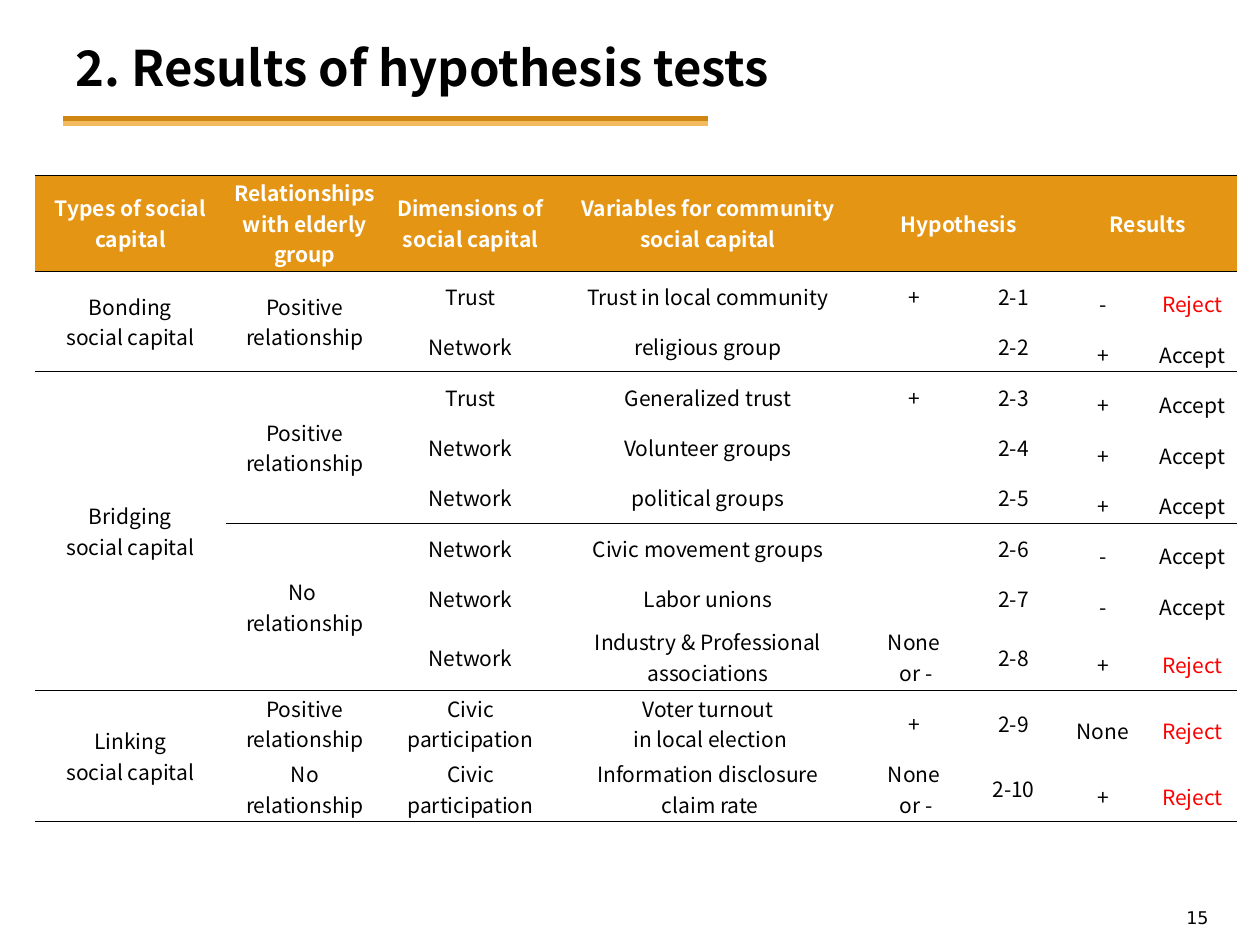
from lxml import etree
from pptx import Presentation
from pptx.dml.color import RGBColor
from pptx.enum.shapes import MSO_CONNECTOR
from pptx.enum.text import MSO_ANCHOR, PP_ALIGN
from pptx.oxml.ns import qn
from pptx.util import Inches, Pt

STRAIGHT = MSO_CONNECTOR.STRAIGHT
TOP, MIDDLE = MSO_ANCHOR.TOP, MSO_ANCHOR.MIDDLE
LEFT, CENTER, RIGHT = PP_ALIGN.LEFT, PP_ALIGN.CENTER, PP_ALIGN.RIGHT

BLACK = RGBColor(0x00, 0x00, 0x00)
WHITE = RGBColor(0xFF, 0xFF, 0xFF)
RED = RGBColor(0xFF, 0x00, 0x00)
ORANGE = RGBColor(0xE4, 0x95, 0x14)
DARK_GOLD = RGBColor(0xCF, 0x87, 0x11)
LIGHT_GOLD = RGBColor(0xF2, 0xBB, 0x60)

FONT = "Noto Sans CJK KR"
NUMBER_FONT = "DejaVu Sans"
NO_STYLE = "{2D5ABB26-0587-4C30-8999-92F81FD0307C}"

COL_WIDTHS = [1.51, 1.26, 1.37, 2.4, 0.87, 0.71, 0.71, 0.71]
ROW_HEIGHTS = [0.76] + [0.4] * 7 + [0.53] + [0.52] * 2
RESULT_COL = 6
RULED_ROWS = {0, 2, 5, 8, 10}
MERGES = [
    (0, 4, 0, 5), (0, 6, 0, 7), (1, 0, 2, 0), (1, 1, 2, 1),
    (3, 0, 8, 0), (3, 1, 5, 1), (6, 1, 8, 1), (9, 0, 10, 0),
]
ROWS = [
    ["Types of social capital", "Relationships with elderly group",
     "Dimensions of social capital", "Variables for community social capital",
     "Hypothesis", "", "Results", ""],
    ["Bonding\nsocial capital", "Positive relationship", "Trust",
     "Trust in local community", "+", "2-1", "-", "Reject"],
    ["", "", "Network", "religious group", "", "2-2", "+", "Accept"],
    ["Bridging\nsocial capital", "Positive relationship", "Trust",
     "Generalized trust", "+", "2-3", "+", "Accept"],
    ["", "", "Network", "Volunteer groups", "", "2-4", "+", "Accept"],
    ["", "", "Network", "political groups", "", "2-5", "+", "Accept"],
    ["", "No \nrelationship", "Network", "Civic movement groups", "", "2-6", "-", "Accept"],
    ["", "", "Network", "Labor unions", "", "2-7", "-", "Accept"],
    ["", "", "Network", "Industry & Professional associations",
     "None\n or -", "2-8", "+", "Reject"],
    ["Linking\nsocial capital", "Positive relationship", "Civic participation",
     "Voter turnout\n in local election", "+", "2-9", "None", "Reject"],
    ["", "No relationship", "Civic participation",
     "Information disclosure\n claim rate", "None\n or -", "2-10", "+", "Reject"],
]


def add_runs(p, text, size, color, bold=False, font=FONT):
    """Write text into a paragraph, one run per line."""
    for i, line in enumerate(text.split("\n")):
        if i:
            p.add_line_break()
        r = p.add_run()
        r.text = line
        r.font.name = font
        r.font.size = Pt(size)
        r.font.bold = bold
        r.font.color.rgb = color
        east_asian = etree.SubElement(r.font._element, qn("a:ea"))
        east_asian.set("typeface", font)


def add_text(s, box, text, size, align, anchor, bold=False, font=FONT):
    """Add a wrapped text box with a single paragraph."""
    tf = s.shapes.add_textbox(*map(Inches, box)).text_frame
    tf.word_wrap = True
    tf.vertical_anchor = anchor
    p = tf.paragraphs[0]
    p.alignment = align
    add_runs(p, text, size, BLACK, bold, font)


def add_rule(s, y, color):
    """Draw one stripe of the rule beneath the title."""
    line = s.shapes.add_connector(STRAIGHT, Inches(0.5), Inches(y), Inches(5.62), Inches(y))
    line.line.color.rgb = color
    line.line.width = Pt(3)
    etree.SubElement(line._element.spPr, qn("a:effectLst"))


def add_border(cell, side, ruled):
    """Give a cell a thin black border on a ruled side, else a white one."""
    width, color = (Pt(0.28), BLACK) if ruled else (Pt(0.5), WHITE)
    ln = etree.SubElement(cell._tc.get_or_add_tcPr(), qn(f"a:{side}"), w=str(width))
    fill = etree.SubElement(ln, qn("a:solidFill"))
    etree.SubElement(fill, qn("a:srgbClr"), val=str(color))


def format_cell(cell, row, col, text):
    """Set the borders, fill and text of a table cell."""
    cell.margin_left = cell.margin_right = Inches(0.07)
    cell.margin_top = cell.margin_bottom = Inches(0.02)
    cell.vertical_anchor = MIDDLE
    last_row = row + cell.span_height - 1 if cell.is_merge_origin else row
    rules = RULED_ROWS - {5} if col == 0 else RULED_ROWS
    add_border(cell, "lnT", row == 0 or row - 1 in rules)
    add_border(cell, "lnB", last_row in rules)
    if row == 0:
        cell.fill.solid()
        cell.fill.fore_color.rgb = ORANGE
    else:
        cell.fill.background()
    if text:
        p = cell.text_frame.paragraphs[0]
        p.alignment = CENTER
        p.space_after = Pt(8)
        if row and col >= RESULT_COL:
            p.line_spacing = 1.5
        color = WHITE if row == 0 else RED if text == "Reject" else BLACK
        add_runs(p, text, 12, color, bold=row == 0)


def add_results_table(s):
    """Add the table of hypotheses and their results."""
    frame = s.shapes.add_table(
        len(ROWS), len(COL_WIDTHS), Inches(0.28), Inches(1.39),
        Inches(sum(COL_WIDTHS)), Inches(sum(ROW_HEIGHTS)))
    table = frame.table
    table.horz_banding = False
    table._tbl.tblPr.find(qn("a:tableStyleId")).text = NO_STYLE
    for column, width in zip(table.columns, COL_WIDTHS):
        column.width = Inches(width)
    for row, height in zip(table.rows, ROW_HEIGHTS):
        row.height = Inches(height)
    for top, left, bottom, right in MERGES:
        table.cell(top, left).merge(table.cell(bottom, right))
    for i, texts in enumerate(ROWS):
        for j, text in enumerate(texts):
            format_cell(table.cell(i, j), i, j, text)


def main():
    """Build the slide and save it."""
    prs = Presentation()
    prs.slide_width, prs.slide_height = Inches(10), Inches(7.5)
    s = prs.slides.add_slide(prs.slide_layouts[6])
    add_rule(s, 0.94, DARK_GOLD)
    add_rule(s, 0.98, LIGHT_GOLD)
    add_text(s, (0.5, 0.22, 7.18, 0.62), "2. Results of hypothesis tests",
             28, LEFT, MIDDLE, bold=True)
    add_text(s, (7.36, 7.15, 2.33, 0.27), "15", 10, RIGHT, TOP, font=NUMBER_FONT)
    add_results_table(s)
    prs.save("out.pptx")


if __name__ == "__main__":
    main()
